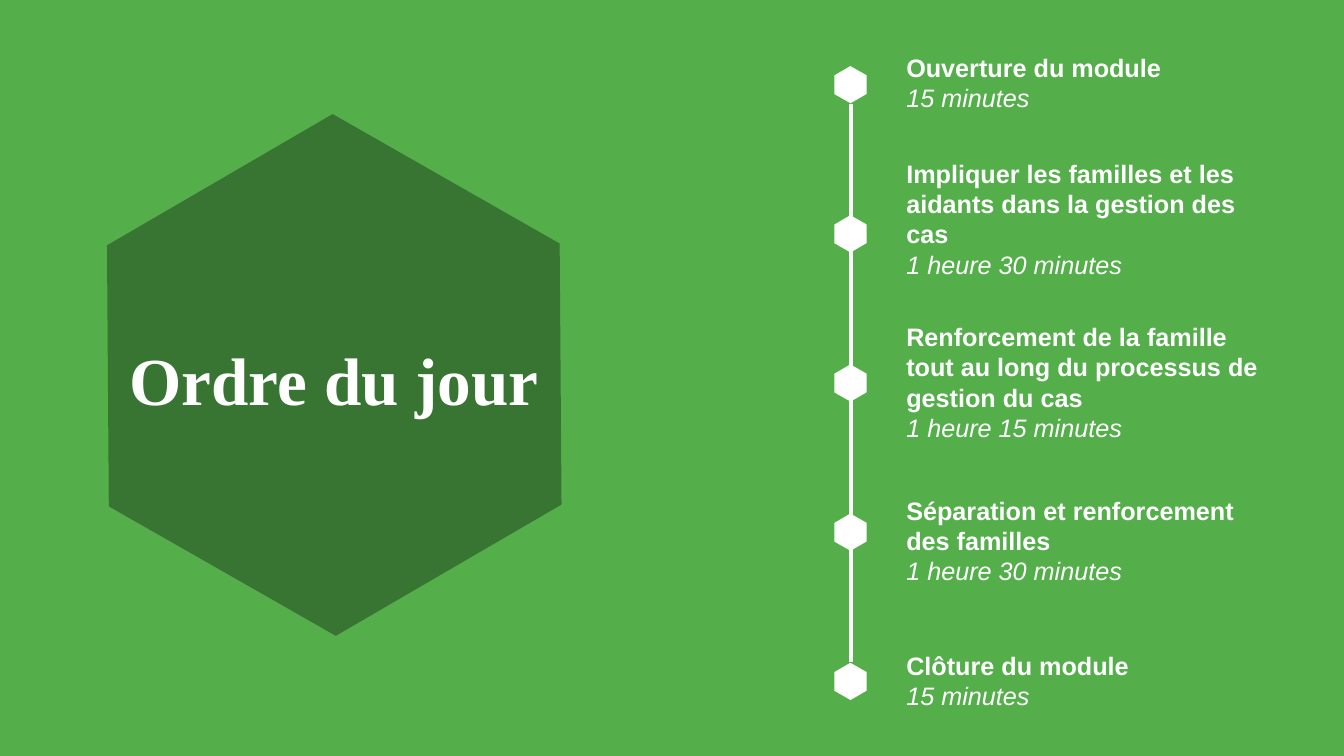
import pptx
import pptx.util
import pptx.dml.color
import pptx.enum.shapes
import pptx.enum.text
import lxml.etree

Inches = pptx.util.Inches
Pt = pptx.util.Pt

GREEN, DARK, WHITE = "54AF4B", "387532", "FFFFFF"
STEPS = [
    ("Ouverture du module", "15 minutes", 0.47, 0.71),
    ("Impliquer les familles et les aidants dans la gestion des cas",
     "1 heure 30 minutes", 1.52, 1.31),
    ("Renforcement de la famille tout au long du processus de gestion du cas",
     "1 heure 15 minutes", 3.14, 1.31),
    ("Séparation et renforcement des familles",
     "1 heure 30 minutes", 4.86, 1.01),
    ("Clôture du module", "15 minutes", 6.4, 0.71),
]


def paint(color, value):
    color.rgb = pptx.dml.color.RGBColor.from_string(value)


def style(para, face, size):
    para.font.name = face
    para.font.size = Pt(size)
    paint(para.font.color, WHITE)


def add_hex(slide, left, top, width, height, fill):
    kind = pptx.enum.shapes.MSO_SHAPE.HEXAGON
    shape = slide.shapes.add_shape(
        kind, Inches(left), Inches(top), Inches(width), Inches(height))
    shape.adjustments[0] = 0.29
    shape.adjustments[1] = 1.155
    shape.rotation = 29.7
    shape.shadow.inherit = False
    shape.fill.solid()
    paint(shape.fill.fore_color, fill)
    shape.line.fill.background()
    return shape


def add_title(slide, left, top, width, height):
    badge = add_hex(slide, left, top, width, height, DARK)
    title = slide.shapes.title
    badge.element.getparent().insert(2, badge.element)
    title.left, title.top = Inches(left + 0.4), Inches(top + 2.02)
    title.width, title.height = Inches(width - 0.8), Inches(0.61)
    frame = title.text_frame
    frame.text = "Ordre du jour"
    frame.word_wrap = True
    frame.auto_size = pptx.enum.text.MSO_AUTO_SIZE.NONE
    frame.vertical_anchor = pptx.enum.text.MSO_ANCHOR.MIDDLE
    para = frame.paragraphs[0]
    para.alignment = pptx.enum.text.PP_ALIGN.CENTER
    para.line_spacing = 0.9
    para.font.bold = True
    style(para, "Times New Roman", 48)


def add_rail(slide, mid, top, bottom):
    kind = pptx.enum.shapes.MSO_CONNECTOR.STRAIGHT
    rail = slide.shapes.add_connector(
        kind, Inches(mid), Inches(top), Inches(mid), Inches(bottom))
    rail.line.width = Pt(2.25)
    paint(rail.line.color, WHITE)
    lxml.etree.SubElement(
        rail.element.spPr, pptx.oxml.ns.qn("a:effectLst"))


def add_step(slide, left, top, width, height, name, time):
    box = slide.shapes.add_textbox(
        Inches(left), Inches(top), Inches(width), Inches(height))
    frame = box.text_frame
    frame.word_wrap = True
    frame.auto_size = pptx.enum.text.MSO_AUTO_SIZE.SHAPE_TO_FIT_TEXT
    frame.text = name + "\n" + time
    head, note = frame.paragraphs
    for para in (head, note):
        style(para, "Arial", 18)
    head.font.bold = True
    note.font.italic = True


def add_agenda(slide, left, top, width, pitch):
    add_rail(slide, left + 0.19, top + 0.35, top + 4 * pitch - 0.03)
    for row, (name, time, high, tall) in enumerate(STEPS):
        add_hex(slide, left, top + row * pitch, 0.37, 0.32, WHITE)
        add_step(slide, left + 0.64, high, width - 0.64, tall, name, time)


def main():
    deck = pptx.Presentation()
    deck.slide_width, deck.slide_height = Inches(13.33), Inches(7.5)
    slide = deck.slides.add_slide(deck.slide_layouts[5])
    slide.background.fill.solid()
    paint(slide.background.fill.fore_color, GREEN)
    add_title(slide, 0.72, 1.48, 5.19, 4.48)
    add_agenda(slide, 8.25, 0.68, 4.43, 1.48)
    deck.save("out.pptx")


if __name__ == "__main__":
    main()
